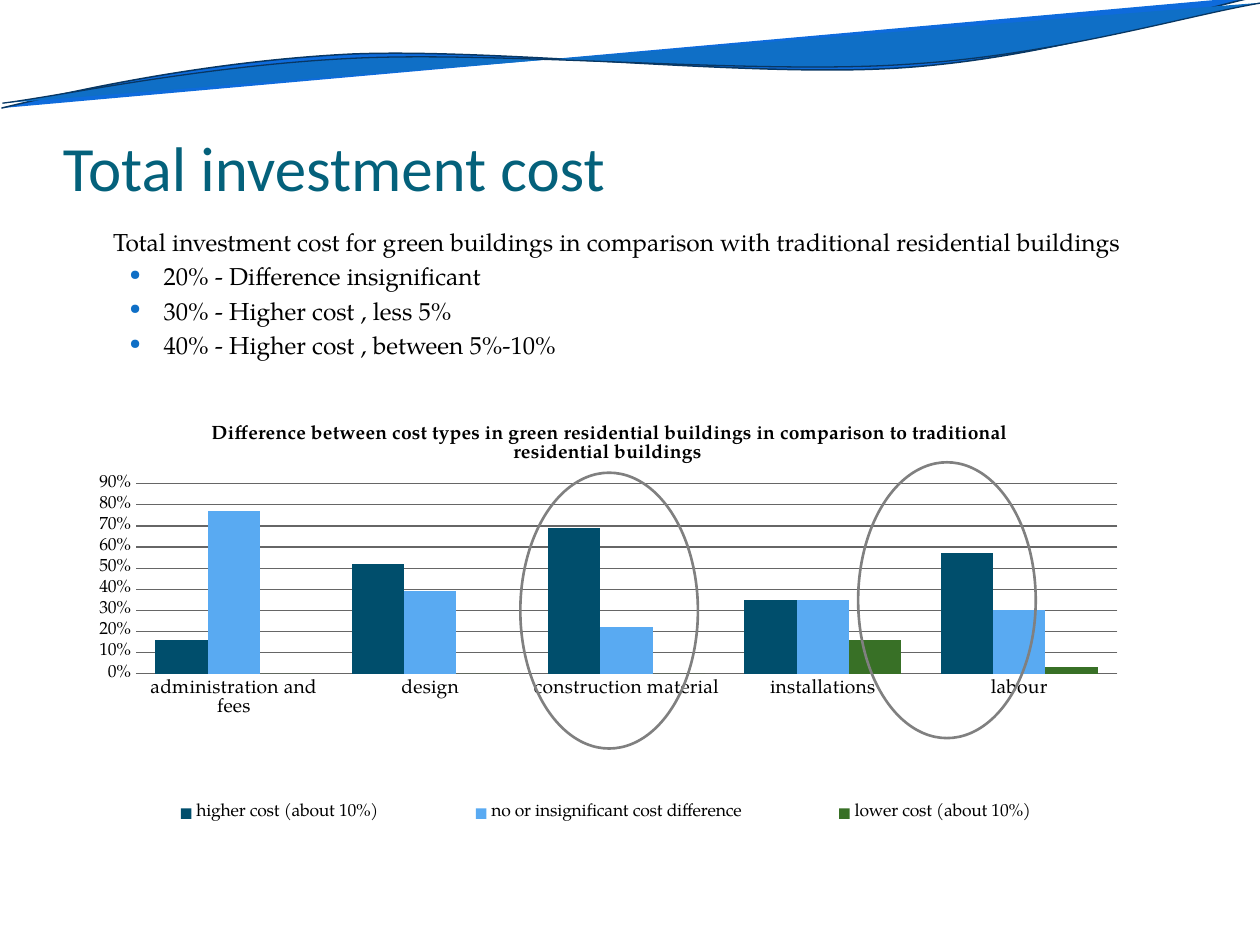
"""Build the slide on total investment cost of green buildings."""
import math

from lxml import etree
from pptx import Presentation
from pptx import util as u
from pptx.chart import data as chart_data
from pptx.dml.color import RGBColor
from pptx.enum import chart as charts, shapes, text
from pptx.oxml import parse_xml
from pptx.oxml.ns import nsdecls, qn

BLACK = RGBColor(0x00, 0x00, 0x00)
TEAL = RGBColor(0x04, 0x61, 0x7B)
BRIGHT_BLUE = RGBColor(0x0E, 0x6B, 0xDC)
BLUE = RGBColor(0x0F, 0x6F, 0xC6)
NAVY = RGBColor(0x08, 0x37, 0x63)
GREY = RGBColor(0x80, 0x80, 0x80)
GRID_GREY = RGBColor(0x66, 0x66, 0x66)
HIGHER = RGBColor(0x00, 0x4E, 0x6C)
EQUAL = RGBColor(0x59, 0xAA, 0xF2)
LOWER = RGBColor(0x38, 0x70, 0x26)
SERIF = "TeX Gyre Pagella"
TILT = 2.7


def write(paragraph, content, size=14, font=SERIF, color=BLACK, bold=False, left=0, first=0, before=0, bullet=False):
    properties = paragraph._p.get_or_add_pPr()
    properties.set("marL", str(u.Cm(left)))
    properties.set("indent", str(u.Cm(first)))
    if before:
        paragraph.space_before = u.Pt(before)
    if bullet:
        for element in (
            f'<a:buClr {nsdecls("a")}><a:srgbClr val="{BLUE}"/></a:buClr>',
            f'<a:buSzPct {nsdecls("a")} val="85000"/>',
            f'<a:buFont {nsdecls("a")} typeface="{SERIF}"/>',
            f'<a:buChar {nsdecls("a")} char="•"/>',
        ):
            properties.append(parse_xml(element))
    run = paragraph.add_run()
    run.text = content
    run.font.size = u.Pt(size)
    run.font.name = font
    run.font.color.rgb = color
    run.font.bold = bold


def place(element, **values):
    for old in element.findall(qn("c:layout")):
        element.remove(old)
    layout = etree.Element(qn("c:layout"))
    manual = etree.SubElement(layout, qn("c:manualLayout"))
    for name, value in values.items():
        etree.SubElement(manual, qn(f"c:{name}")).set("val", str(value))
    return layout


presentation = Presentation()
presentation.slide_width = u.Cm(25.4)
presentation.slide_height = u.Cm(19.05)
slide = presentation.slides.add_slide(presentation.slide_layouts[6])

waves = [
    (BRIGHT_BLUE, 0.85, (12.73, 1.12),
     [(0.03, 2.18), (1.27, 1.88), (4.06, 1.24), (7.09, 1.09), (10.11, 0.97),
      (15.09, 1.57), (18.14, 1.37), (21.21, 1.17), (23.9, 0.23), (25.4, -0.08)]),
    (BLUE, 0.75, (12.76, 1.13),
     [(0.05, 2.08), (1.24, 1.93), (4.22, 1.3), (7.24, 1.17), (10.29, 1.04),
      (15.21, 1.5), (18.24, 1.3), (21.29, 1.12), (23.95, 0.3), (25.48, 0.05)]),
]
cosine, sine = math.cos(math.radians(TILT)), math.sin(math.radians(TILT))
for color, width, (center_x, center_y), points in waves:
    offsets = [(x - center_x, y - center_y) for x, y in points]
    level = [(u.Cm(center_x + x * cosine - y * sine), u.Cm(center_y + x * sine + y * cosine)) for x, y in offsets]
    builder = slide.shapes.build_freeform(*level[0])
    builder.add_line_segments(level[1:], close=False)
    wave = builder.convert_to_shape()
    segments = list(wave._element.iter(qn("a:lnTo")))
    for start in range(0, len(segments), 3):
        curve = etree.Element(qn("a:cubicBezTo"))
        segments[start].addprevious(curve)
        for segment in segments[start:start + 3]:
            curve.append(segment[0])
            segment.getparent().remove(segment)
    wave.rotation = 360 - TILT
    wave.shadow.inherit = False
    wave.fill.solid()
    wave.fill.fore_color.rgb = color
    wave.line.color.rgb = NAVY
    wave.line.width = u.Pt(width)

title = slide.shapes.add_textbox(u.Cm(1.27), u.Cm(1.96), u.Cm(22.86), u.Cm(2.16)).text_frame
title.word_wrap = True
title.vertical_anchor = text.MSO_ANCHOR.BOTTOM
title.margin_left = title.margin_right = title.margin_bottom = 0
write(title.paragraphs[0], "Total investment cost", size=36, font="Calibri", color=TEAL)

body = slide.shapes.add_textbox(u.Cm(1.27), u.Cm(4.45), u.Cm(21.8), u.Cm(3.68)).text_frame
body.word_wrap = True
write(body.paragraphs[0],
      "Total investment cost for green buildings in comparison with traditional residential buildings", left=0.76)
for finding in ("20% - Difference insignificant", "30% - Higher cost , less 5%", "40% - Higher cost , between 5%-10%"):
    write(body.add_paragraph(), finding, left=1.78, first=-0.69, before=2.8, bullet=True)

costs = chart_data.CategoryChartData(number_format="0%")
costs.categories = ["administration and fees", "design", "construction material", "installations", "labour"]
series_rows = [
    ("higher cost (about 10%)", (0.16, 0.52, 0.69, 0.35, 0.57), HIGHER),
    ("no or insignificant cost difference", (0.77, 0.39, 0.22, 0.35, 0.3), EQUAL),
    ("lower cost (about 10%)", (0, 0, 0, 0.16, 0.03), LOWER),
]
for name, values, color in series_rows:
    costs.add_series(name, values)
chart = slide.shapes.add_chart(charts.XL_CHART_TYPE.COLUMN_CLUSTERED, u.Cm(1.58), u.Cm(8.13),
                               u.Cm(21.44), u.Cm(9.12), costs).chart
chart.font.name = SERIF
chart.font.size = u.Pt(10)
chart.font.color.rgb = BLACK
chart.has_title = True
write(chart.chart_title.text_frame.paragraphs[0],
      "Difference between cost types in green residential buildings in comparison to traditional residential buildings ",
      size=11, bold=True)
chart.chart_title.include_in_layout = False

plot = chart.plots[0]
plot.gap_width = 75
plot.overlap = 0
plot.vary_by_categories = False
for series, (name, values, color) in zip(plot.series, series_rows):
    series.format.fill.solid()
    series.format.fill.fore_color.rgb = color

category_axis = chart.category_axis
category_axis.major_tick_mark = charts.XL_TICK_MARK.NONE
category_axis.tick_labels.font.size = u.Pt(11)
category_axis.format.line.color.rgb = GRID_GREY
value_axis = chart.value_axis
value_axis.minimum_scale = 0
value_axis.maximum_scale = 0.9
value_axis.major_unit = 0.1
value_axis.major_tick_mark = charts.XL_TICK_MARK.NONE
value_axis.format.line.fill.background()
value_axis.major_gridlines.format.line.color.rgb = GRID_GREY
value_axis.major_gridlines.format.line.width = u.Pt(0.75)
value_axis.tick_labels.number_format = "0%"
value_axis.tick_labels.number_format_is_linked = False

chart.has_legend = True
chart.legend.position = charts.XL_LEGEND_POSITION.BOTTOM
chart.legend.include_in_layout = False
chart.legend.font.size = u.Pt(10)
plot_area = chart._chartSpace.chart.plotArea
plot_area.insert(0, place(plot_area, layoutTarget="inner", xMode="edge", yMode="edge",
                          x=0.054, y=0.178, w=0.923, h=0.42))
legend = chart.legend._element
legend.find(qn("c:legendPos")).addnext(
    place(legend, xMode="edge", yMode="edge", x=0.01, y=0.857, w=0.972, h=0.1))

for left, top in ((17.3, 9.32), (10.49, 9.53)):
    highlight = slide.shapes.add_shape(shapes.MSO_SHAPE.OVAL, u.Cm(left), u.Cm(top), u.Cm(3.58), u.Cm(5.56))
    highlight.shadow.inherit = False
    highlight.fill.background()
    highlight.line.color.rgb = GREY
    highlight.line.width = u.Pt(1.5)

presentation.save("out.pptx")
